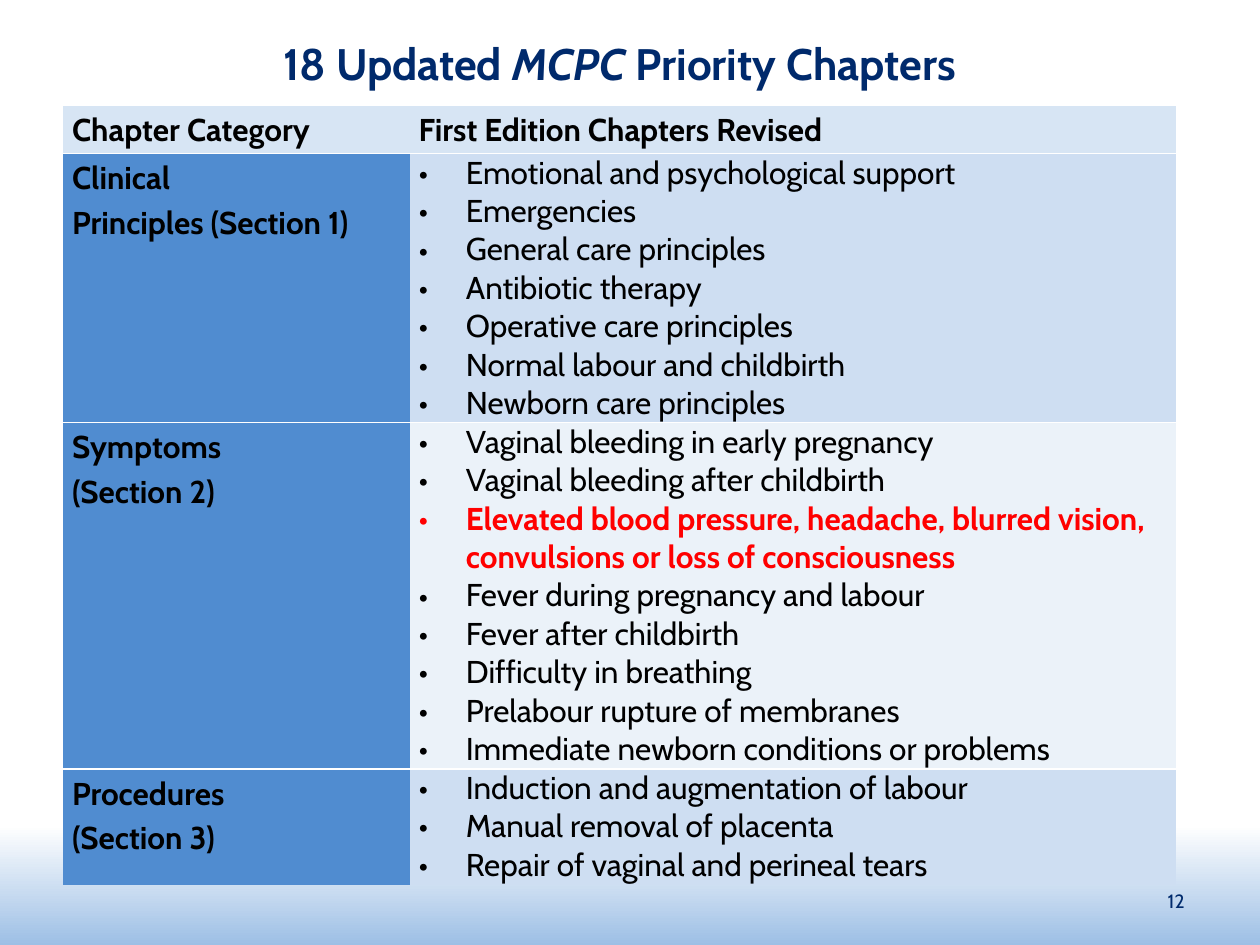
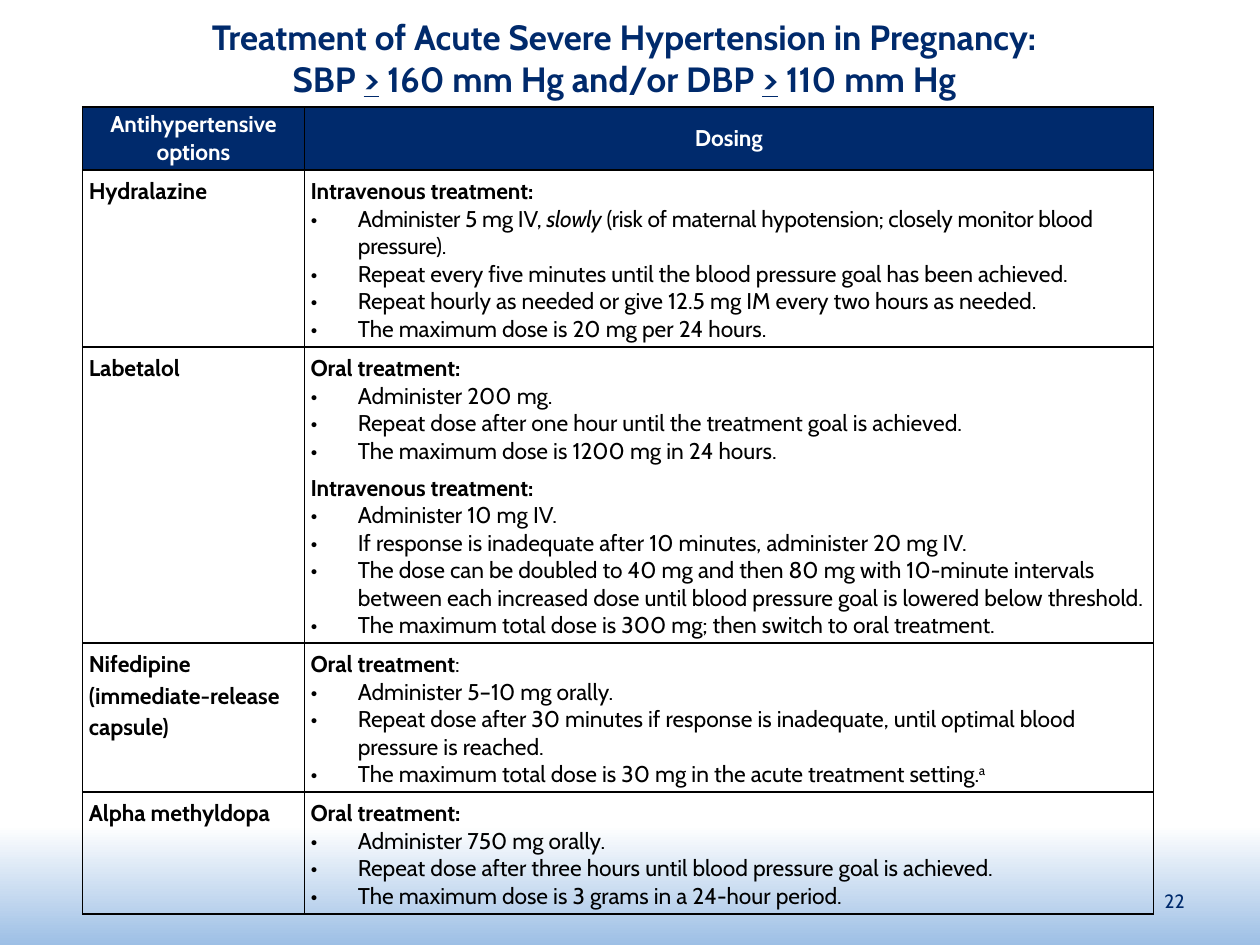
import pptx
import pptx.util
import pptx.dml.color
import pptx.enum.shapes
import pptx.enum.text
import pptx.oxml.ns
from lxml import etree

Pt = pptx.util.Pt
ALIGN = pptx.enum.text.PP_ALIGN
MIDDLE = pptx.enum.text.MSO_ANCHOR.MIDDLE
TOP = pptx.enum.text.MSO_ANCHOR.TOP

FONT = "Cabin"
NAVY, BLACK, WHITE, RED = "002A6C", "000000", "FFFFFF", "FF0000"
HEAD, LABEL, PALE, LIGHT, SKY = "D7E5F4", "508CD0", "EBF2F9", "CEDEF2", "9DBFE5"
HANG = 27  # hanging indent of bulleted lines

CHAPTERS = [
    (["Clinical", "Principles (Section 1)"], LIGHT, [
        "Emotional and psychological support",
        "Emergencies",
        "General care principles",
        "Antibiotic therapy",
        "Operative care principles",
        "Normal labour and childbirth",
        "Newborn care principles"]),
    (["Symptoms", "(Section 2)"], PALE, [
        "Vaginal bleeding in early pregnancy",
        "Vaginal bleeding after childbirth",
        "Elevated blood pressure, headache, blurred vision, "
        "convulsions or loss of consciousness",
        "Fever during pregnancy and labour",
        "Fever after childbirth",
        "Difficulty in breathing",
        "Prelabour rupture of membranes",
        "Immediate newborn conditions or problems"]),
    (["Procedures", "(Section 3)"], LIGHT, [
        "Induction and augmentation of labour",
        "Manual removal of placenta",
        "Repair of vaginal and perineal tears"]),
]

# Lines that end with a colon are headings, the rest are bullets
DRUGS = [
    ("Hydralazine", [
        "Intravenous treatment:",
        "Administer 5 mg IV, |i:slowly| (risk of maternal hypotension; "
        "closely monitor blood pressure).",
        "Repeat every five minutes until the blood pressure goal has been achieved.",
        "Repeat hourly as needed or give 12.5 mg IM every two hours as needed.",
        "The maximum dose is 20 mg per 24 hours."]),
    ("Labetalol", [
        "Oral treatment:",
        "Administer 200 mg.",
        "Repeat dose after one hour until the treatment goal is achieved.",
        "The maximum dose is 1200 mg in 24 hours.",
        "Intravenous treatment:",
        "Administer 10 mg IV.",
        "If response is inadequate after 10 minutes, administer 20 mg IV.",
        "The dose can be doubled to 40 mg and then 80 mg with 10-minute intervals "
        "between each increased dose until blood pressure goal is lowered below threshold.",
        "The maximum total dose is 300 mg; then switch to oral treatment."]),
    ("Nifedipine (immediate-release capsule)", [
        "Oral treatment|p::",
        "Administer 5–10 mg orally.",
        "Repeat dose after 30 minutes if response is inadequate, "
        "until optimal blood pressure is reached.",
        "The maximum total dose is 30 mg in the acute treatment setting.|s:a"]),
    ("Alpha methyldopa", [
        "Oral treatment:",
        "Administer 750 mg orally.",
        "Repeat dose after three hours until blood pressure goal is achieved.",
        "The maximum dose is 3 grams in a 24-hour period."]),
]


def tint(code):
    return pptx.dml.color.RGBColor.from_string(code)


def child(node, tag, **attrs):
    return etree.SubElement(node, pptx.oxml.ns.qn(tag), **attrs)


def write(frame, text, size=18, color=BLACK, bold=False, align=ALIGN.LEFT,
          space=1.0, before=0, bullet=False, track=0):
    """Add a paragraph; |i:..|, |u:..|, |p:..| and |s:..| mark italic,
    underlined, plain and superscript parts."""
    para = frame.paragraphs[-1]
    if para.runs:
        para = frame.add_paragraph()
    para.alignment, para.line_spacing = align, space
    para.space_before = Pt(before)
    if bullet:
        props = para._p.get_or_add_pPr()
        props.set("marL", str(Pt(HANG)))
        props.set("indent", str(-Pt(HANG)))
        child(props, "a:buFont", typeface=FONT)
        child(props, "a:buChar", char="•")
    for num, part in enumerate(text.split("|")):
        mark = ""
        if num % 2:
            mark, _, part = part.partition(":")
        for row, line in enumerate(part.split("\n")):
            if row:
                para.add_line_break()
            run = para.add_run()
            run.text = line
            font = run.font
            font.name, font.size, font.color.rgb = FONT, Pt(size), tint(color)
            font.bold = bold and mark != "p"
            font.italic, font.underline = mark == "i", mark == "u"
            props = run._r.get_or_add_rPr()
            if mark == "s":
                props.set("baseline", "30000")
            if track:
                props.set("spc", str(track))


def label(slide, box, text, **fmt):
    frame = slide.shapes.add_textbox(*map(Pt, box)).text_frame
    frame.word_wrap, frame.vertical_anchor = True, MIDDLE
    write(frame, text, color=NAVY, **fmt)


def base(deck, title, box, size, page):
    """Start a slide with the fading band, title and page number."""
    slide = deck.slides.add_slide(deck.slide_layouts[6])
    band = slide.shapes.add_shape(pptx.enum.shapes.MSO_SHAPE.RECTANGLE,
                                  Pt(0), Pt(198), Pt(720), Pt(342))
    band.shadow.inherit = False
    band.line.fill.background()
    band.fill.gradient()
    band.fill.gradient_angle = 270
    for stop, place, code in zip(band.fill.gradient_stops, (0.8, 1), (WHITE, SKY)):
        stop.position, stop.color.rgb = place, tint(code)
    label(slide, box, title, size=size, bold=True, align=ALIGN.CENTER)
    label(slide, (516, 500.4, 168, 28.8), page, size=11, align=ALIGN.RIGHT)
    return slide


def grid(slide, left, top, cols, rows):
    """Add a table without the banded style."""
    table = slide.shapes.add_table(len(rows), len(cols), Pt(left), Pt(top),
                                   Pt(sum(cols)), Pt(sum(rows))).table
    table.first_row = table.horz_banding = False
    for col, width in zip(table.columns, cols):
        col.width = Pt(width)
    for row, height in zip(table.rows, rows):
        row.height = Pt(height)
    return table


def dress(cell, fill, edge, sides, pad, anchor=TOP):
    """Set fill, borders, margins and anchor; return the text frame."""
    if fill:
        cell.fill.solid()
        cell.fill.fore_color.rgb = tint(fill)
    else:
        cell.fill.background()
    props = cell._tc.get_or_add_tcPr()
    for spot, side in enumerate("LRTB"):
        line = child(props, "a:ln" + side, w=str(Pt(1)))
        if side in sides:
            child(child(line, "a:solidFill"), "a:srgbClr", val=edge)
        else:
            child(line, "a:noFill")
        props.insert(spot, line)
    cell.margin_left = cell.margin_right = Pt(pad[0])
    cell.margin_top = cell.margin_bottom = Pt(pad[1])
    cell.vertical_anchor = anchor
    return cell.text_frame


def topics(slide, left, top):
    """Chapter table: category on the left, chapters on the right."""
    table = grid(slide, left, top, (198, 437.8), (27.6, 153.8, 197.8, 66.2))

    def frame(row, col, fill):
        sides = "T" if row == len(CHAPTERS) else "TB"
        return dress(table.cell(row, col), fill, WHITE, sides, (5.2, 0))

    for col, text in enumerate(("Chapter Category", "First Edition Chapters Revised")):
        write(frame(0, col, HEAD), text, bold=True, space=1.15)
    for row, (names, fill, items) in enumerate(CHAPTERS, 1):
        side, body = frame(row, 0, LABEL), frame(row, 1, fill)
        for name in names:
            write(side, name, bold=True, space=1.15)
        for item in items:
            key = item.startswith("Elevated")
            write(body, item, bullet=True, bold=key, color=RED if key else BLACK)


def doses(slide, left, top):
    """Drug table: option on the left, dosing on the right."""
    table = grid(slide, left, top, (126.7, 485.3), (36, 101.1, 169.1, 85.2, 69.7))

    def frame(row, col, fill=None, anchor=TOP):
        return dress(table.cell(row, col), fill, BLACK, "LRTB", (3.6, 2.2), anchor)

    for col, text in enumerate(("Antihypertensive options", "Dosing")):
        write(frame(0, col, NAVY, MIDDLE), text, size=13, color=WHITE,
              bold=True, align=ALIGN.CENTER)
    for row, (name, lines) in enumerate(DRUGS, 1):
        write(frame(row, 0), name, size=13, bold=True, space=1.15)
        body = frame(row, 1)
        for num, line in enumerate(lines):
            if line.endswith(":"):
                write(body, line, size=13, bold=True, space=1.15,
                      before=3 if num else 0)
            else:
                write(body, line, size=13, bullet=True,
                      track=-10 if "slowly" in line else 0)


def main():
    deck = pptx.Presentation()
    deck.slide_width, deck.slide_height = Pt(720), Pt(540)
    topics(base(deck, "18 Updated |i:MCPC| Priority Chapters",
                (30.2, 18, 648, 36), 25.2, "12"), 36, 60.2)
    doses(base(deck, "Treatment of Acute Severe Hypertension in Pregnancy:\n"
               "SBP |u:>| 160 mm Hg and/or DBP |u:>| 110 mm Hg",
               (29.8, 18, 653.8, 30.2), 20, "22"), 47.2, 61.2)
    deck.save("out.pptx")


if __name__ == "__main__":
    main()
